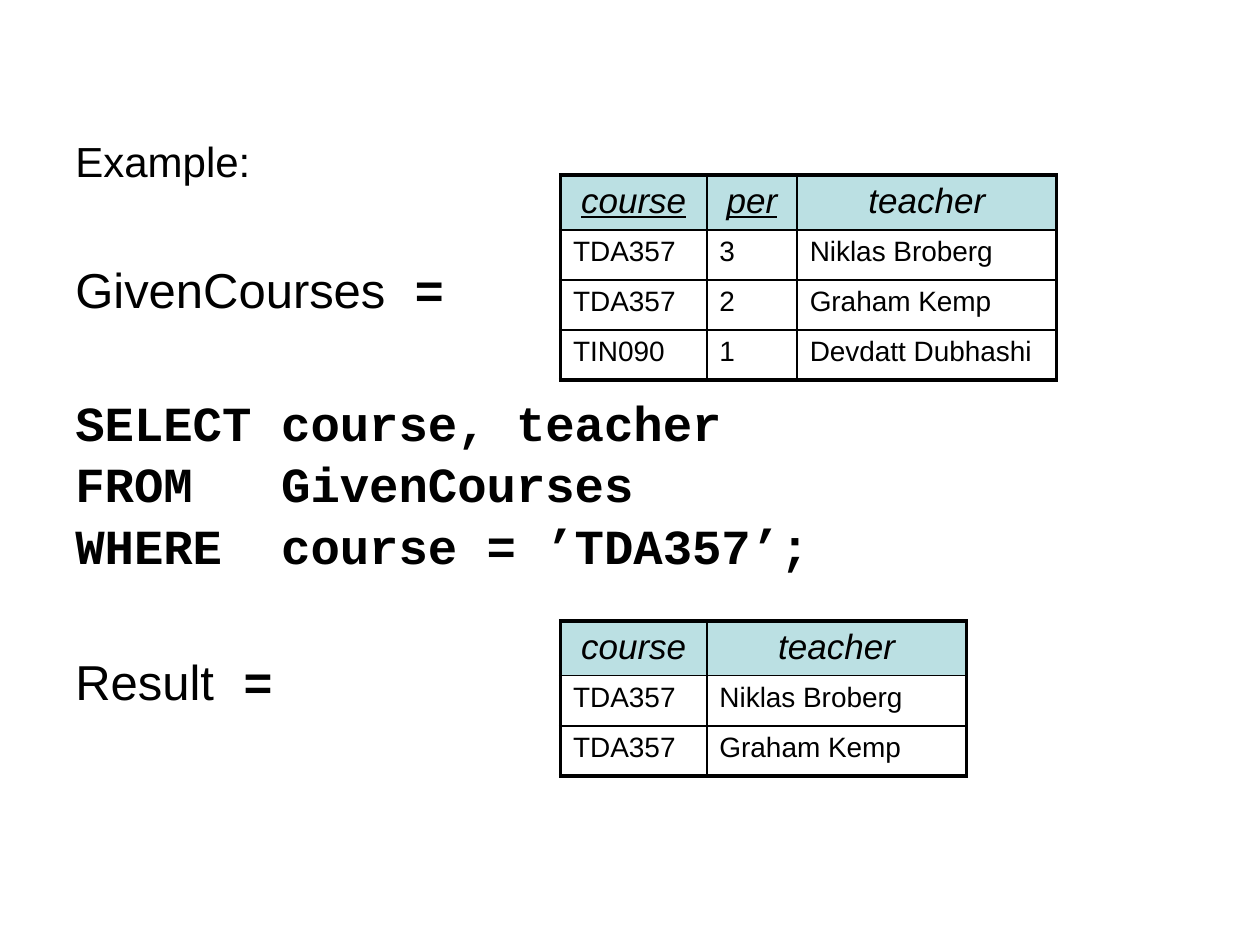
from lxml import etree
from pptx import Presentation
from pptx import util as u
from pptx.dml import color
from pptx.enum import text
from pptx.oxml import ns


def rgb(value):
    return color.RGBColor.from_string(value)


def add_run(paragraph, content, font="Arial", size=28, bold=False,
            italic=False, underline=False, ink="000000"):
    run = paragraph.add_run()
    run.text = content
    run.font.name = font
    run.font.size = u.Pt(size)
    run.font.bold = bold
    run.font.italic = italic
    run.font.underline = underline
    run.font.color.rgb = rgb(ink)


class SlideBuilder:
    ink = "000000"
    header_fill = "BBE0E3"
    code = {"font": "Courier New", "bold": True}
    outer_line = 2.25
    inner_line = 1
    header_height = 1.09
    row_height = 1.01

    def __init__(self, slide):
        self.slide = slide

    def body(self, left, top, width, height, lines, tab):
        shape = self.slide.shapes.add_textbox(
            u.Cm(left), u.Cm(top), u.Cm(width), u.Cm(height))
        frame = shape.text_frame
        frame.word_wrap = True
        frame.margin_left = frame.margin_right = 0
        frame.margin_top = frame.margin_bottom = 0
        for index, (space, runs) in enumerate(lines):
            paragraph = frame.paragraphs[0] if index == 0 else frame.add_paragraph()
            paragraph.space_before = u.Pt(space)
            for content, style in runs:
                add_run(paragraph, content, ink=self.ink, **style)
            if "\t" in paragraph.text:
                self.tab_stop(paragraph, tab)

    def tab_stop(self, paragraph, position):
        properties = paragraph._p.get_or_add_pPr()
        tabs = etree.SubElement(properties, ns.qn("a:tabLst"))
        etree.SubElement(tabs, ns.qn("a:tab"), pos=str(u.Cm(position)), algn="l")

    def borders(self, cell, widths):
        properties = cell._tc.get_or_add_tcPr()
        for index, (side, width) in enumerate(zip("LRTB", widths)):
            line = etree.Element(ns.qn(f"a:ln{side}"), w=str(u.Pt(width)))
            fill = etree.SubElement(line, ns.qn("a:solidFill"))
            etree.SubElement(fill, ns.qn("a:srgbClr"), val=self.ink)
            properties.insert(index, line)

    def table(self, left, top, widths, rows, keys=()):
        heights = [self.header_height] + [self.row_height] * (len(rows) - 1)
        table = self.slide.shapes.add_table(
            len(rows), len(widths), u.Cm(left), u.Cm(top),
            u.Cm(sum(widths)), u.Cm(sum(heights))).table
        table.first_row = table.horz_banding = False
        for column, width in zip(table.columns, widths):
            column.width = u.Cm(width)
        last_row, last_column = len(rows) - 1, len(widths) - 1
        for r, row in enumerate(rows):
            table.rows[r].height = u.Cm(heights[r])
            for c, content in enumerate(row):
                cell = table.cell(r, c)
                paragraph = cell.text_frame.paragraphs[0]
                header = r == 0
                if header:
                    cell.fill.solid()
                    cell.fill.fore_color.rgb = rgb(self.header_fill)
                    paragraph.alignment = text.PP_ALIGN.CENTER
                else:
                    cell.fill.background()
                add_run(paragraph, content, size=20 if header else 16,
                        italic=header, underline=header and content in keys,
                        ink=self.ink)
                edges = (c == 0, c == last_column, header, r == last_row)
                self.borders(cell, [self.outer_line if edge else self.inner_line
                                    for edge in edges])


def main():
    presentation = Presentation()
    presentation.slide_width = u.Cm(25.4)
    presentation.slide_height = u.Cm(19.05)
    builder = SlideBuilder(presentation.slides.add_slide(presentation.slide_layouts[6]))
    code = builder.code
    builder.body(1.52, 2.74, 22.35, 14, [
        (0, [("Example:", {"size": 24})]),
        (42, [("GivenCourses", {}), (" =", code)]),
        (42, [("SELECT\tcourse, teacher", code)]),
        (1.7, [("FROM\tGivenCourses", code)]),
        (1.7, [("WHERE\tcourse = ’TDA357’;", code)]),
        (44, [("Result", {}), (" =", code)]),
    ], tab=4.15)

    course, period, teacher = 2.95, 1.82, 5.23
    table_left = 11.3
    builder.table(table_left, 3.53, [course, period, teacher], [
        ("course", "per", "teacher"),
        ("TDA357", "3", "Niklas Broberg"),
        ("TDA357", "2", "Graham Kemp"),
        ("TIN090", "1", "Devdatt Dubhashi"),
    ], keys=("course", "per"))
    builder.table(table_left, 12.52, [course, teacher], [
        ("course", "teacher"),
        ("TDA357", "Niklas Broberg"),
        ("TDA357", "Graham Kemp"),
    ])
    presentation.save("out.pptx")


if __name__ == "__main__":
    main()
